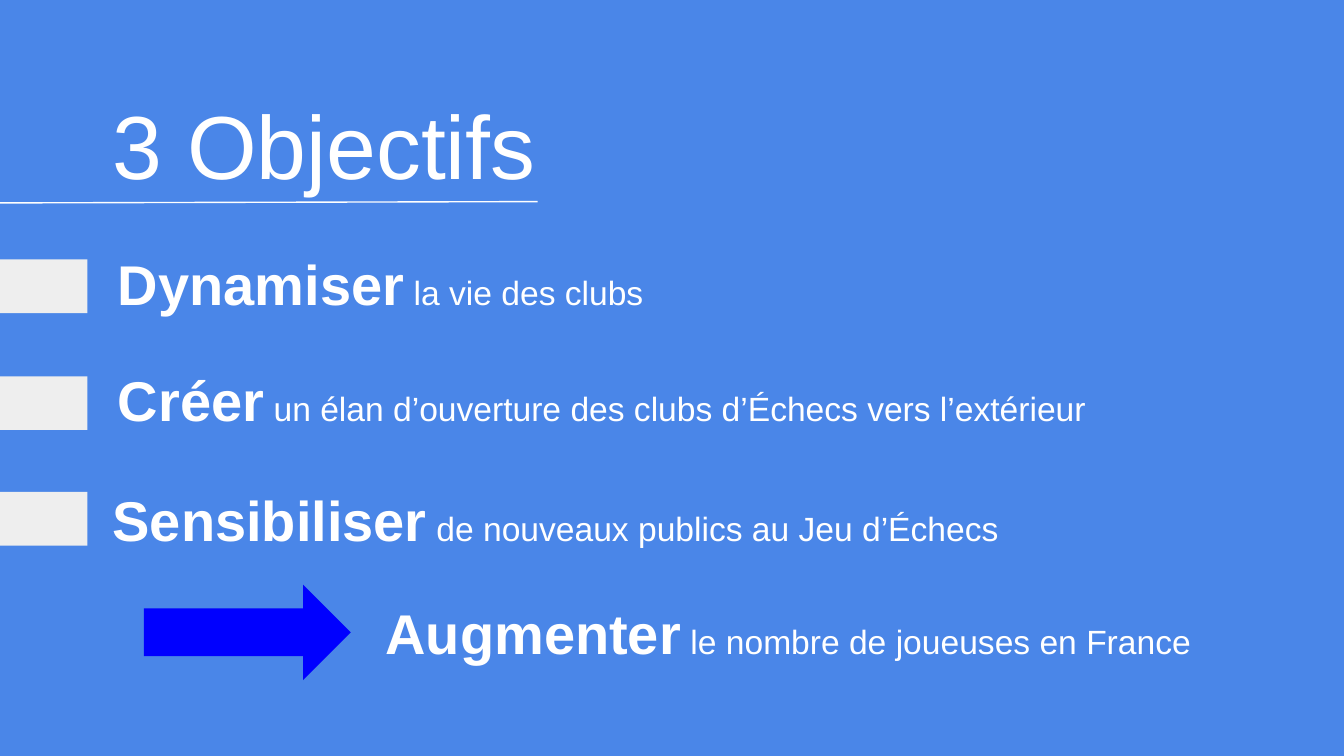
"""Build the slide that lists the three objectives."""
from lxml import etree
from pptx import Presentation
from pptx.dml.color import RGBColor
from pptx.enum.shapes import MSO_CONNECTOR as Connector, MSO_SHAPE as Shape
from pptx.enum.text import MSO_ANCHOR as Anchor
from pptx.oxml.ns import qn
from pptx.util import Inches, Pt

WHITE = "FFFFFF"


def paint(fill, color):
    fill.solid()
    fill.fore_color.rgb = RGBColor.from_string(color)


def add_text(slide, box, runs):
    frame = slide.shapes.add_textbox(*map(Inches, box)).text_frame
    frame_format = {"word_wrap": True, "vertical_anchor": Anchor.TOP}
    for side in ("left", "top", "right", "bottom"):
        frame_format[f"margin_{side}"] = Inches(0.1)
    for name, value in frame_format.items():
        setattr(frame, name, value)
    paragraph = frame.paragraphs[0]
    for text, size, bold in runs:
        run = paragraph.add_run()
        run.text = text
        for name, value in {"name": "Arial", "size": Pt(size), "bold": bold}.items():
            setattr(run.font, name, value)
        paint(run.font.fill, WHITE)


presentation = Presentation()
presentation.slide_width = Inches(10)
presentation.slide_height = Inches(10 * 9 / 16)
slide = presentation.slides.add_slide(presentation.slide_layouts[6])
paint(slide.background.fill, "4A86E8")

add_text(slide, (0.74, 0.57, 4.4, 0.75), [("3 Objectifs", 48, False)])

underline = slide.shapes.add_connector(
    Connector.STRAIGHT, Inches(0), Inches(1.51), Inches(4), Inches(1.5)
)
underline.line.width = Pt(0.75)
paint(underline.line.fill, WHITE)
etree.SubElement(underline.element.spPr, qn("a:effectLst"))

markers = [(Shape.RECTANGLE, (0, top, 0.65, 0.4), "EEEEEE") for top in (1.93, 2.8, 3.66)]
arrow = (Shape.RIGHT_ARROW, (1.07, 4.35, 1.54, 0.71), "0000FF")
for kind, box, color in [*markers, arrow]:
    shape = slide.shapes.add_shape(kind, *map(Inches, box))
    shape.shadow.inherit = False
    paint(shape.fill, color)
    shape.line.fill.background()

objectives = [
    ((0.78, 1.76, 7.73, 0.61), "Dynamiser", " la vie des clubs"),
    ((0.78, 2.62, 7.73, 0.61), "Créer", " un élan d’ouverture des clubs d’Échecs vers l’extérieur"),
    ((0.74, 3.51, 8.42, 0.71), "Sensibiliser", " de nouveaux publics au Jeu d’Échecs"),
    ((2.77, 4.35, 6.45, 0.61), "Augmenter", " le nombre de joueuses en France"),
]
for box, verb, detail in objectives:
    add_text(slide, box, [(verb, 30, True), (detail, 18, False)])

presentation.save("out.pptx")
